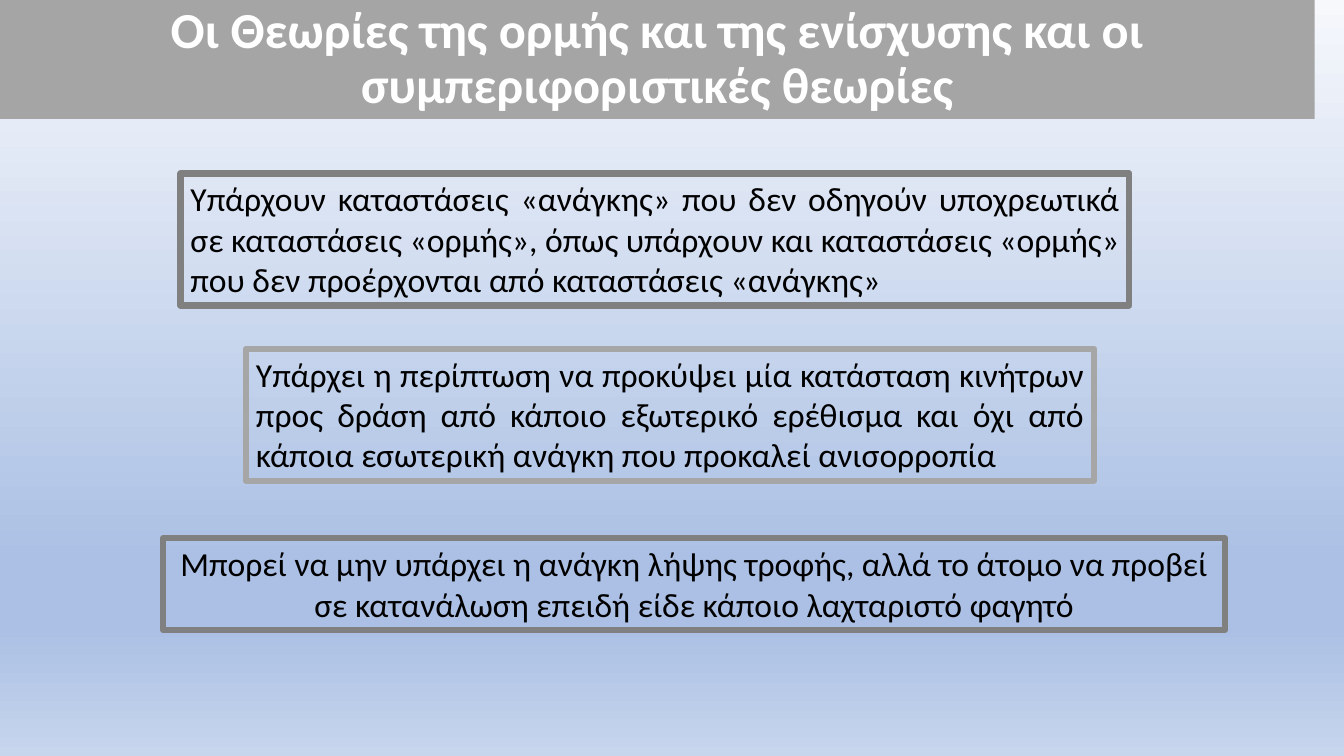
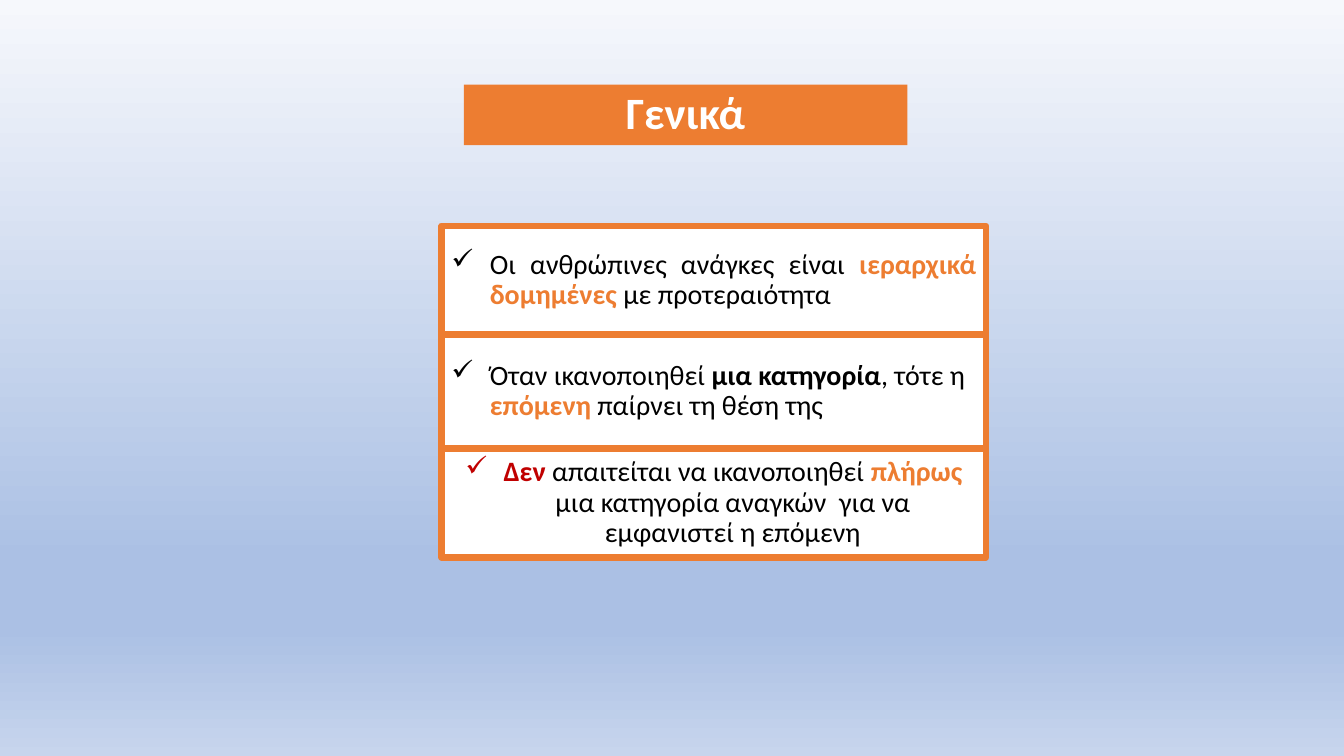
import copy

import lxml.etree
import pptx
import pptx.dml.color
import pptx.enum.shapes
import pptx.enum.text
import pptx.oxml.ns
import pptx.util

Inches = pptx.util.Inches
ALIGN = pptx.enum.text.PP_ALIGN
ANCHOR = pptx.enum.text.MSO_ANCHOR

FONT = "Calibri"
WHITE, BLACK, RED = "FFFFFF", "000000", "C00000"
ORANGE, SILVER, GRAY, LIGHT_GRAY = "ED7D31", "A5A5A5", "808080", "A6A6A6"
BACKGROUND_STOPS = [(0, "F6F8FC"), (0.74, "ABC0E4"), (0.83, "ABC0E4"), (1, "C7D5ED")]
BORDER_WIDTH = 4.5

# Run styles: colour and bold
PLAIN, STRONG = (BLACK, False), (BLACK, True)
ACCENT, WARNING, TITLE = (ORANGE, True), (RED, True), (WHITE, True)

# Titles: text, size, fill, (left, top, width, height)
DRIVE_TITLE = ("Οι Θεωρίες της ορµής και της ενίσχυσης και οι συµπεριφοριστικές θεωρίες",
               36, SILVER, (0, 0, 13.04, 1.18))
GENERAL_TITLE = ("Γενικά", 32, ORANGE, (4.6, 0.84, 4.4, 0.6))

# Statements: text, alignment, border, (left, top, width, height)
STATEMENTS = [
    ("Υπάρχουν καταστάσεις «ανάγκης» που δεν οδηγούν υποχρεωτικά σε καταστάσεις «ορµής», "
     "όπως υπάρχουν και καταστάσεις «ορµής» που δεν προέρχονται από καταστάσεις «ανάγκης»",
     ALIGN.JUSTIFY, GRAY, (1.79, 1.72, 9.41, 1.31)),
    ("Υπάρχει η περίπτωση να προκύψει µία κατάσταση κινήτρων προς δράση από κάποιο "
     "εξωτερικό ερέθισµα και όχι από κάποια εσωτερική ανάγκη που προκαλεί ανισορροπία",
     ALIGN.JUSTIFY, LIGHT_GRAY, (2.44, 3.46, 8.41, 1.31)),
    ("Μπορεί να µην υπάρχει η ανάγκη λήψης τροφής, αλλά το άτοµο να προβεί σε κατανάλωση "
     "επειδή είδε κάποιο λαχταριστό φαγητό",
     ALIGN.CENTER, GRAY, (1.62, 5.34, 10.53, 0.91)),
]

# Principles, stacked: height, alignment, runs
PRINCIPLES_LEFT, PRINCIPLES_TOP, PRINCIPLES_WIDTH = 4.38, 2.24, 5.4
PRINCIPLES = [
    (1.08, ALIGN.JUSTIFY, [
        ("Οι ανθρώπινες ανάγκες είναι ", PLAIN),
        ("ιεραρχικά δομημένες ", ACCENT),
        ("με προτεραιότητα", PLAIN)]),
    (1.13, ALIGN.LEFT, [
        ("Όταν ικανοποιηθεί ", PLAIN),
        ("μια κατηγορία", STRONG),
        (", τότε η ", PLAIN),
        ("επόμενη", ACCENT),
        (" παίρνει τη θέση της", PLAIN)]),
    (1.08, ALIGN.CENTER, [
        ("Δεν ", WARNING),
        ("απαιτείται να ικανοποιηθεί ", PLAIN),
        ("πλήρως ", ACCENT),
        ("μια κατηγορία αναγκών  για να εμφανιστεί η επόμενη", PLAIN)]),
]


def color(value):
    return pptx.dml.color.RGBColor.from_string(value)


def set_attributes(target, values):
    for name, value in values.items():
        setattr(target, name, value)


def add_slide(presentation):
    """Add a blank slide with the shared vertical gradient."""
    slide = presentation.slides.add_slide(presentation.slide_layouts[6])
    fill = slide.background.fill
    fill.gradient()
    fill.gradient_angle = 270
    stop_list = slide.element.xpath(".//a:gsLst")[0]
    while len(stop_list) < len(BACKGROUND_STOPS):
        stop_list.append(copy.deepcopy(stop_list[0]))
    for stop, (position, value) in zip(fill.gradient_stops, BACKGROUND_STOPS):
        stop.position = position
        stop.color.rgb = color(value)
    return slide


def add_box(slide, bounds, runs, size, alignment, fill=None, border=None,
            frame_format=None, paragraph_format=None):
    """Add a rectangle holding one paragraph and return that paragraph."""
    shape = slide.shapes.add_shape(pptx.enum.shapes.MSO_SHAPE.RECTANGLE,
                                   *(Inches(length) for length in bounds))
    shape.shadow.inherit = False
    if fill:
        shape.fill.solid()
        shape.fill.fore_color.rgb = color(fill)
    else:
        shape.fill.background()
    if border:
        shape.line.color.rgb = color(border)
        shape.line.width = pptx.util.Pt(BORDER_WIDTH)
    else:
        shape.line.fill.background()

    frame = shape.text_frame
    set_attributes(frame, {"word_wrap": True, "vertical_anchor": ANCHOR.MIDDLE,
                           **(frame_format or {})})
    paragraph = frame.paragraphs[0]
    set_attributes(paragraph, {"alignment": alignment, **(paragraph_format or {})})
    for text, (value, bold) in runs:
        run = paragraph.add_run()
        run.text = text
        set_attributes(run.font, {"name": FONT, "size": pptx.util.Pt(size), "bold": bold})
        run.font.color.rgb = color(value)
    return paragraph


def add_title(slide, text, size, fill, bounds):
    add_box(slide, bounds, [(text, TITLE)], size, ALIGN.CENTER, fill=fill,
            paragraph_format={"line_spacing": 0.9})


def add_check_bullet(paragraph, indent=0.38):
    properties = paragraph._p.get_or_add_pPr()
    properties.set("marL", str(Inches(indent)))
    properties.set("indent", str(-Inches(indent)))
    bullet = lxml.etree.SubElement(properties, pptx.oxml.ns.qn("a:buChar"))
    bullet.set("char", "✓")


def build_drive_slide(presentation):
    slide = add_slide(presentation)
    add_title(slide, *DRIVE_TITLE)
    frame_format = {"vertical_anchor": ANCHOR.TOP,
                    "auto_size": pptx.enum.text.MSO_AUTO_SIZE.SHAPE_TO_FIT_TEXT}
    for text, alignment, border, bounds in STATEMENTS:
        add_box(slide, bounds, [(text, PLAIN)], 24, alignment, border=border,
                frame_format=frame_format)


def build_general_slide(presentation):
    slide = add_slide(presentation)
    add_title(slide, *GENERAL_TITLE)
    top = PRINCIPLES_TOP
    for height, alignment, runs in PRINCIPLES:
        bounds = (PRINCIPLES_LEFT, top, PRINCIPLES_WIDTH, height)
        paragraph = add_box(slide, bounds, runs, 20, alignment, fill=WHITE, border=ORANGE,
                            paragraph_format={"line_spacing": 0.9})
        add_check_bullet(paragraph)
        top += height


def main():
    presentation = pptx.Presentation()
    presentation.slide_width = Inches(13.33)
    presentation.slide_height = Inches(7.5)
    build_drive_slide(presentation)
    build_general_slide(presentation)
    presentation.save("out.pptx")


if __name__ == "__main__":
    main()
